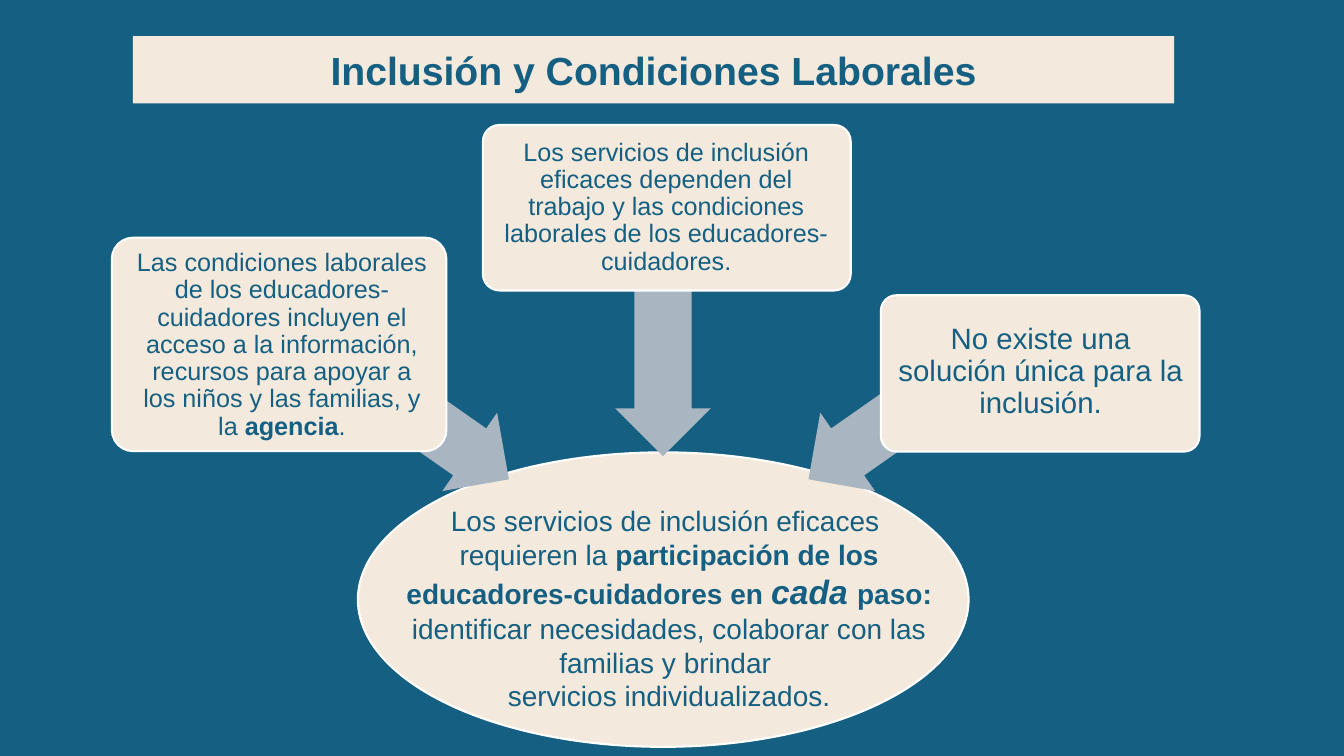
from pptx import Presentation
from pptx.dml.color import RGBColor
from pptx.enum.shapes import MSO_SHAPE as Preset
from pptx.enum.text import MSO_ANCHOR as Anchor, MSO_AUTO_SIZE as AutoSize, PP_ALIGN as Align
from pptx.util import Cm, Pt

COLORS = {"blue": "156082", "cream": "F3E9DC", "gray": "A9B5C0", "white": "FFFFFF"}

deck = Presentation()
deck.slide_width, deck.slide_height = Cm(33.87), Cm(19.05)
page = deck.slides.add_slide(deck.slide_layouts[6])
page.background.fill.solid()
page.background.fill.fore_color.rgb = RGBColor.from_string(COLORS["blue"])


def add_box(preset, place, fill="cream", outlined=False):
    box = page.shapes.add_shape(preset, *[Cm(length) for length in place])
    box.shadow.inherit = False
    box.fill.solid()
    box.fill.fore_color.rgb = RGBColor.from_string(COLORS[fill])
    if outlined:
        box.line.color.rgb = RGBColor.from_string(COLORS["white"])
        box.line.width = Pt(1.5)
    else:
        box.line.fill.background()
    return box


def write(box, paragraphs, size, inset, spacing=None):
    """Each paragraph is a list of (text, font values) pairs."""
    frame = box.text_frame
    frame.word_wrap = True
    frame.vertical_anchor = Anchor.MIDDLE
    for side in ("left", "top", "right", "bottom"):
        setattr(frame, f"margin_{side}", Cm(inset))
    for index, spans in enumerate(paragraphs):
        para = frame.add_paragraph() if index else frame.paragraphs[0]
        para.alignment = Align.CENTER
        para.line_spacing = spacing
        for text, values in spans:
            span = para.add_run()
            span.text = text
            span.font.color.rgb = RGBColor.from_string(COLORS["blue"])
            for name, value in ({"name": "Arial", "size": Pt(size)} | values).items():
                setattr(span.font, name, value)


BOLD = {"bold": True}

# Central ellipse and its message
add_box(Preset.OVAL, (9.02, 11.4, 15.39, 7.42), outlined=True)
message = page.shapes.add_textbox(Cm(9.45), Cm(12.11), Cm(14.83), Cm(6.43))
write(message, [
    [("Los servicios de inclusión eficaces ", {})],
    [("requieren la ", {}),
     ("participación de los educadores-cuidadores en ", BOLD),
     ("cada ", BOLD | {"italic": True, "size": Pt(24)}),
     ("paso: ", BOLD),
     ("identificar necesidades, colaborar con las familias y brindar ", {})],
    [("servicios individualizados.", {})],
], size=20, inset=0.03)

# Idea cards, each with an arrow to the ellipse:
# arrow place, rotation, card place, text place, size, spans
ideas = [
    ((6.63, 8.92, 6.81, 2.41), 215, (2.82, 5.99, 8.43, 5.38), (3.28, 6.12, 7.65, 5.16), 18,
     [("Las condiciones laborales de los educadores-cuidadores incluyen el acceso a la "
       "información, recursos para apoyar a los niños y las familias, y la ", {}),
      ("agencia", BOLD), (".", {})]),
    ((12.62, 6.2, 8.18, 2.41), 270, (12.17, 3.15, 9.27, 4.17), (12.47, 3.35, 8.64, 3.76), 18,
     [("Los servicios de inclusión eficaces dependen del trabajo y las condiciones "
       "laborales de los educadores-cuidadores.", {})]),
    ((19.76, 8.92, 6.81, 2.41), 325, (22.2, 7.44, 8.03, 3.94), (22.4, 7.49, 7.65, 3.76), 21,
     [("No existe una solución única para la inclusión.", {})]),
]
for arrow_place, rotation, card_place, text_place, size, spans in ideas:
    arrow = add_box(Preset.LEFT_ARROW, arrow_place, fill="gray")
    arrow.rotation = rotation
    arrow.adjustments[0], arrow.adjustments[1] = 0.6, 0.5
    card = add_box(Preset.ROUNDED_RECTANGLE, card_place, outlined=True)
    card.adjustments[0] = 0.1
    write(add_box(Preset.RECTANGLE, text_place), [spans], size, inset=0.1, spacing=0.9)

# Title band
title = add_box(Preset.RECTANGLE, (3.35, 0.91, 26.24, 1.7))
write(title, [[("Inclusión y Condiciones Laborales", BOLD)]], size=28, inset=0.25)
title.text_frame.vertical_anchor = Anchor.TOP
title.text_frame.auto_size = AutoSize.SHAPE_TO_FIT_TEXT

deck.save("out.pptx")
